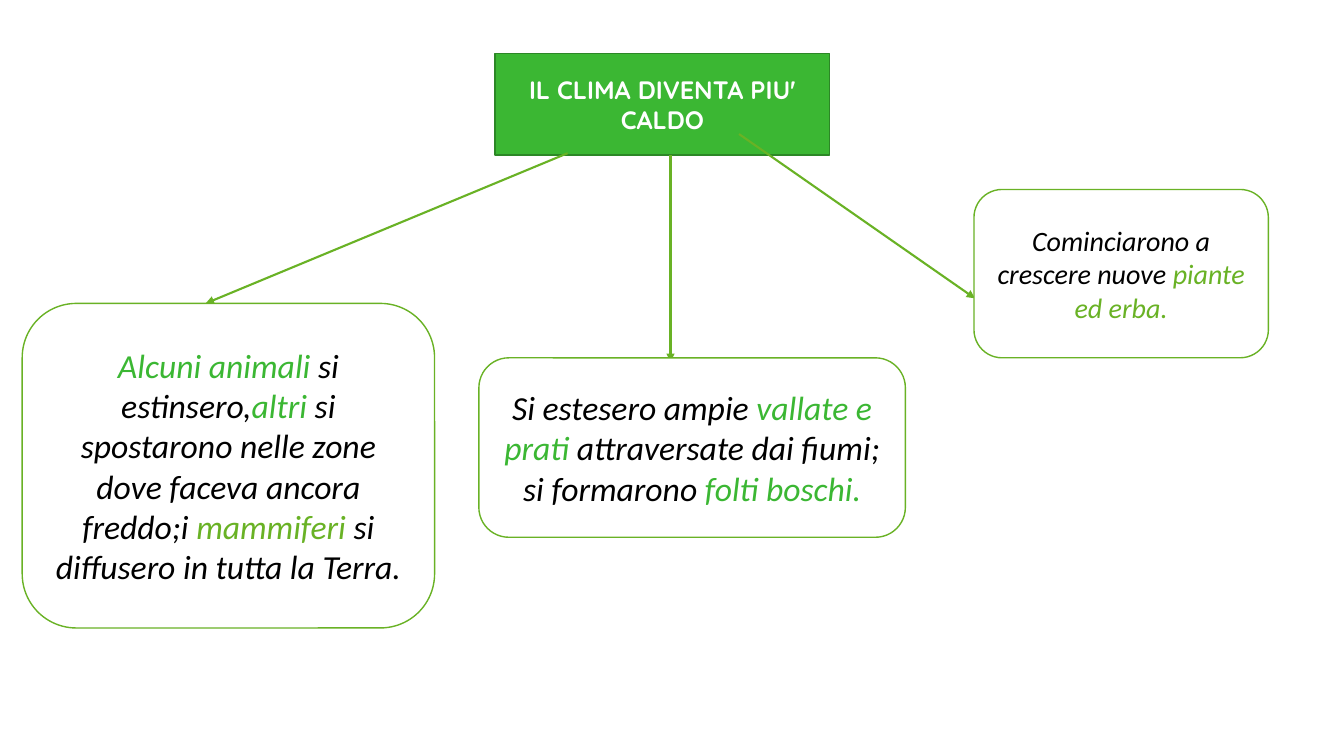
from lxml.etree import SubElement
from pptx import Presentation
from pptx.dml.color import RGBColor
from pptx.enum.shapes import MSO_CONNECTOR as Connector, MSO_SHAPE as Shape
from pptx.enum.text import MSO_ANCHOR as Anchor, MSO_AUTO_SIZE as AutoSize, PP_ALIGN as Align
from pptx.oxml.ns import qn
from pptx.util import Inches, Pt

COLORS = {
    "white": "FFFFFF",
    "black": "000000",
    "green": "3BB733",
    "edge": "2C8726",
    "olive": "69B225",
}
HEADING_BOX = (4.91, 0.53, 3.32, 1.01)
HEADING = "IL CLIMA DIVENTA PIU' CALDO"
OUTCOMES = [
    {
        "box": (0.22, 3.01, 4.09, 3.22),
        "size": 24,
        "start": (0.72, 0.99),
        "tip": (1.82, 0),
        "spans": [
            ("Alcuni animali ", "green"),
            ("si estinsero,", "black"),
            ("altri ", "green"),
            ("si spostarono nelle zone dove faceva ancora freddo;i ", "black"),
            ("mammiferi ", "olive"),
            ("si diffusero in tutta la Terra.", "black"),
        ],
    },
    {
        "box": (4.75, 3.55, 4.23, 1.78),
        "size": 24,
        "start": (1.74, 1.01),
        "tip": (1.9, 0.04),
        "spans": [
            ("Si estesero ampie ", "black"),
            ("vallate e prati ", "green"),
            ("attraversate dai fiumi; si formarono ", "black"),
            ("folti boschi.", "green"),
        ],
    },
    {
        "box": (9.66, 1.88, 2.92, 1.67),
        "size": 20,
        "start": (2.42, 0.8),
        "tip": (0.01, 1.08),
        "spans": [
            ("Cominciarono a crescere nuove ", "black"),
            ("piante ed erba.", "olive"),
        ],
    },
]


def color(name):
    """Return the named colour."""
    return RGBColor.from_string(COLORS[name])


def style_box(box, fill, line):
    """Give a box its fill, outline and centred, wrapped text frame."""
    box.fill.solid()
    box.fill.fore_color.rgb = color(fill)
    box.line.color.rgb = color(line)
    box.line.width = Pt(1)
    frame = box.text_frame
    frame.word_wrap = True
    frame.auto_size = AutoSize.NONE
    frame.vertical_anchor = Anchor.MIDDLE
    frame.paragraphs[0].alignment = Align.CENTER


def add_span(para, text, font, size, tint, bold=False, italic=False):
    """Append one formatted run to a paragraph."""
    span = para.add_run()
    span.text = text
    span.font.name = font
    span.font.size = Pt(size)
    span.font.bold = bold
    span.font.italic = italic
    span.font.color.rgb = color(tint)


def place_heading(page, area):
    """Move and format the title as the root of the diagram."""
    heading = page.shapes.title
    heading.left, heading.top, heading.width, heading.height = map(Inches, area)
    style_box(heading, "green", "edge")
    add_span(heading.text_frame.paragraphs[0], HEADING, "Quicksand", 18, "white", bold=True)


def add_arrow(page, start, tip):
    """Draw a straight arrow between two points."""
    arrow = page.shapes.add_connector(Connector.STRAIGHT, *map(Inches, start + tip))
    arrow.line.color.rgb = color("olive")
    arrow.line.width = Pt(1.5)
    SubElement(arrow.line._get_or_add_ln(), qn("a:tailEnd"), type="triangle")
    SubElement(arrow._element.spPr, qn("a:effectLst"))


def add_outcome(page, area, outcome):
    """Draw an outcome card and the arrow leading to it from the heading."""
    start = tuple(a + b for a, b in zip(HEADING_BOX, outcome["start"]))
    tip = tuple(a + b for a, b in zip(area, outcome["tip"]))
    add_arrow(page, start, tip)
    card = page.shapes.add_shape(Shape.ROUNDED_RECTANGLE, *map(Inches, area))
    card.shadow.inherit = False
    style_box(card, "white", "olive")
    para = card.text_frame.paragraphs[0]
    for text, tint in outcome["spans"]:
        add_span(para, text, "Calibri", outcome["size"], tint, italic=True)


def main():
    """Build and save the slide."""
    deck = Presentation()
    deck.slide_width, deck.slide_height = Inches(13.33), Inches(7.5)
    page = deck.slides.add_slide(deck.slide_layouts[5])
    place_heading(page, HEADING_BOX)
    for outcome in OUTCOMES:
        add_outcome(page, outcome["box"], outcome)
    deck.save("out.pptx")


if __name__ == "__main__":
    main()
